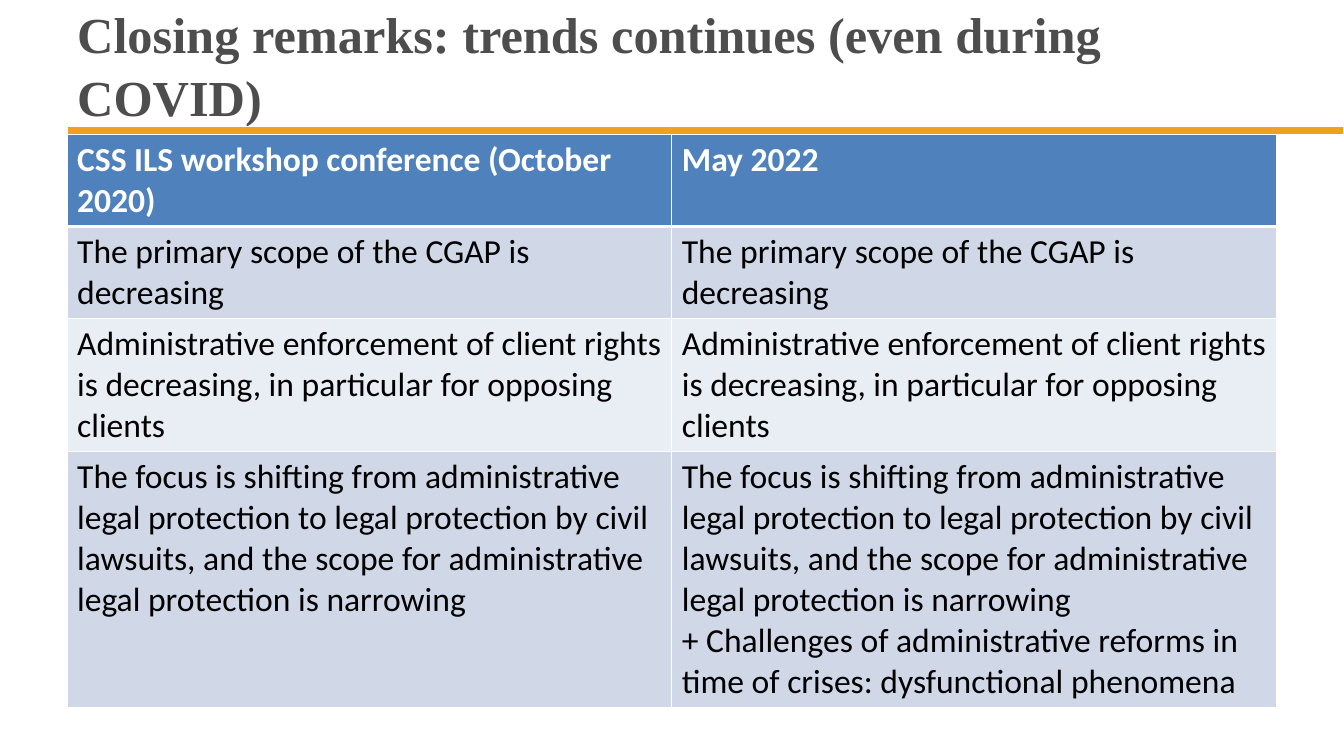
import dataclasses

import lxml.etree
import pptx
import pptx.dml.color
import pptx.enum.shapes
import pptx.enum.text
import pptx.oxml.ns
import pptx.util
from pptx.util import Cm


@dataclasses.dataclass(frozen=True)
class Theme:
    """Colours, fonts and type sizes of the slide."""
    title: str = "4D4D4D"
    accent: str = "EDA021"
    header: str = "4F81BD"
    bands: tuple = ("D0D8E8", "E9EDF4")
    light: str = "FFFFFF"
    dark: str = "000000"
    title_font: str = "Times New Roman"
    body_font: str = "Calibri"
    title_size: int = 36
    body_size: int = 24


THEME = Theme()
LEFT, WIDTH = Cm(1.69), Cm(30.48)
RULE_TOP, TABLE_TOP = Cm(3.18), Cm(3.39)
ROW_HEIGHTS = (2.32, 2.32, 3.35, 6.45)

TITLE = "Closing remarks: trends continues (even during COVID)"
SCOPE = "The primary scope of the CGAP is decreasing"
ENFORCEMENT = ("Administrative enforcement of client rights is decreasing, "
               "in particular for opposing clients")
FOCUS = ("The focus is shifting from administrative legal protection to legal "
         "protection by civil lawsuits, and the scope for administrative legal "
         "protection is narrowing")
CHALLENGES = ("+ Challenges of administrative reforms in time of crises: "
              "dysfunctional phenomena")
COMPARISON = (
    (["CSS ILS workshop conference (October 2020)"], ["May 2022"]),
    ([SCOPE], [SCOPE]),
    ([ENFORCEMENT], [ENFORCEMENT]),
    ([FOCUS], [FOCUS, CHALLENGES]),
)


def rgb(value):
    """Turn a hex string into a colour."""
    return pptx.dml.color.RGBColor.from_string(value)


def write_text(frame, lines, *, font, size, color, bold=False, spacing=1.0):
    """Fill a text frame with one formatted paragraph per line."""
    for index, line in enumerate(lines):
        paragraph = frame.add_paragraph() if index else frame.paragraphs[0]
        paragraph.alignment = pptx.enum.text.PP_ALIGN.LEFT
        paragraph.line_spacing = spacing
        run = paragraph.add_run()
        run.text = line
        run.font.name = font
        run.font.size = pptx.util.Pt(size)
        run.font.bold = bold
        run.font.color.rgb = rgb(color)


def set_borders(cell, **widths):
    """Draw solid light borders of the given point widths on a cell."""
    properties = cell._tc.get_or_add_tcPr()
    qn = pptx.oxml.ns.qn
    for position, (side, width) in enumerate(widths.items()):
        border = lxml.etree.Element(qn(f"a:{side}"), w=str(pptx.util.Pt(width)))
        fill = lxml.etree.SubElement(border, qn("a:solidFill"))
        lxml.etree.SubElement(fill, qn("a:srgbClr"), val=THEME.light)
        properties.insert(position, border)


def add_title(slide):
    """Place the slide title in its placeholder."""
    title = slide.shapes.title
    title.left, title.top, title.width, title.height = LEFT, Cm(0), WIDTH, RULE_TOP
    frame = title.text_frame
    frame.word_wrap = True
    frame.auto_size = pptx.enum.text.MSO_AUTO_SIZE.NONE
    frame.vertical_anchor = pptx.enum.text.MSO_ANCHOR.MIDDLE
    write_text(frame, [TITLE], font=THEME.title_font, size=THEME.title_size,
               color=THEME.title, bold=True, spacing=1.05)


def add_rule(slide, slide_width):
    """Draw the accent bar from the left margin to the slide edge."""
    rule = slide.shapes.add_shape(pptx.enum.shapes.MSO_SHAPE.RECTANGLE, LEFT,
                                  RULE_TOP, slide_width - LEFT, TABLE_TOP - RULE_TOP)
    rule.shadow.inherit = False
    rule.fill.solid()
    rule.fill.fore_color.rgb = rgb(THEME.accent)
    rule.line.color.rgb = rgb(THEME.light)
    rule.line.width = pptx.util.Pt(0.75)


def add_comparison(slide):
    """Add the banded table that compares the two dates."""
    table = slide.shapes.add_table(len(COMPARISON), len(COMPARISON[0]), LEFT,
                                   TABLE_TOP, WIDTH, Cm(sum(ROW_HEIGHTS))).table
    for row_index, entries in enumerate(COMPARISON):
        table.rows[row_index].height = Cm(ROW_HEIGHTS[row_index])
        is_header = row_index == 0
        fill = THEME.header if is_header else THEME.bands[(row_index - 1) % 2]
        for column_index, lines in enumerate(entries):
            cell = table.cell(row_index, column_index)
            cell.fill.solid()
            cell.fill.fore_color.rgb = rgb(fill)
            set_borders(cell, lnL=1, lnR=1, lnT=3 if row_index == 1 else 1,
                        lnB=3 if is_header else 1)
            write_text(cell.text_frame, lines, font=THEME.body_font,
                       size=THEME.body_size, bold=is_header,
                       color=THEME.light if is_header else THEME.dark)


def main():
    """Build and save the presentation."""
    presentation = pptx.Presentation()
    presentation.slide_width = Cm(33.87)
    presentation.slide_height = Cm(19.05)
    slide = presentation.slides.add_slide(presentation.slide_layouts[5])
    add_rule(slide, presentation.slide_width)
    add_title(slide)
    add_comparison(slide)
    presentation.save("out.pptx")


if __name__ == "__main__":
    main()
